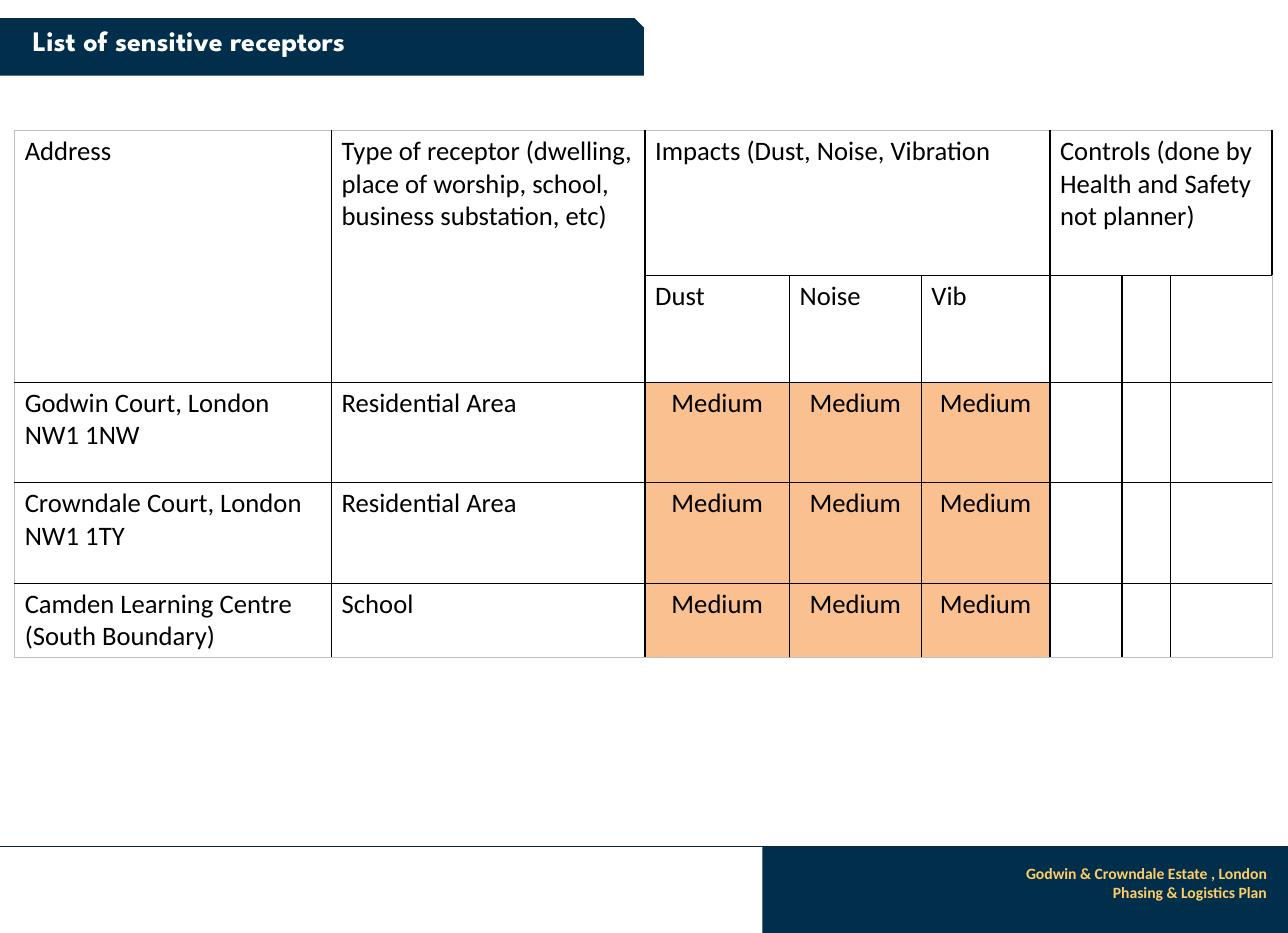
"""Build the slide listing the sensitive receptors around the estate."""
from lxml.etree import SubElement
from pptx import Presentation
from pptx.dml.color import RGBColor
from pptx.enum.shapes import MSO_CONNECTOR, MSO_SHAPE
from pptx.enum.text import MSO_ANCHOR, PP_ALIGN
from pptx.oxml.ns import qn
from pptx.util import Inches, Pt

COLOURS = {
    "navy": "012E4B",
    "rule": "0F243E",
    "gold": "FFCC66",
    "white": "FFFFFF",
    "black": "000000",
    "medium": "FAC090",
    "outline": "BFBFBF",
}
COLUMN_WIDTHS = [2.81, 2.78, 1.28, 1.17, 1.14, 0.64, 0.43, 0.9]
ROW_HEIGHTS = [1.28, 0.95, 0.89, 0.89, 0.66]
HEADINGS = [
    ["Address", "Type of receptor (dwelling, place of worship, school, business substation, etc)",
     "Impacts (Dust, Noise, Vibration", "", "",
     "Controls (done by Health and Safety not planner)", "", ""],
    ["", "", "Dust", "Noise", "Vib", "", "", ""],
]
RECEPTORS = [
    ("Godwin Court, London NW1 1NW", "Residential Area"),
    ("Crowndale Court, London NW1 1TY", "Residential Area"),
    ("Camden Learning Centre (South Boundary)", "School"),
]
MERGES = [(0, 0, 1, 0), (0, 1, 1, 1), (0, 2, 0, 4), (0, 5, 0, 7)]


def colour(name):
    return RGBColor.from_string(COLOURS[name])


def write(frame, lines, size=17, font="Calibri", ink="black", bold=False, align=PP_ALIGN.LEFT):
    frame.word_wrap = True
    for index, line in enumerate(lines):
        paragraph = frame.paragraphs[0] if index == 0 else frame.add_paragraph()
        paragraph.alignment = align
        run = paragraph.add_run()
        run.text = line
        run.font.size = Pt(size)
        run.font.name = font
        run.font.bold = bold
        run.font.color.rgb = colour(ink)


class ReceptorSlide:
    def __init__(self, slide):
        self.slide = slide

    def panel(self, kind, left, top, width, height):
        panel = self.slide.shapes.add_shape(
            kind, Inches(left), Inches(top), Inches(width), Inches(height))
        panel.shadow.inherit = False
        panel.fill.solid()
        panel.fill.fore_color.rgb = colour("navy")
        panel.line.fill.background()

    def rule(self, y, width):
        rule = self.slide.shapes.add_connector(
            MSO_CONNECTOR.STRAIGHT, 0, Inches(y), Inches(width), Inches(y))
        rule.line.color.rgb = colour("rule")
        rule.line.width = Pt(0.75)
        SubElement(rule._element.spPr, qn("a:effectLst"))

    def text(self, left, top, width, height, lines, anchor=MSO_ANCHOR.TOP, **style):
        box = self.slide.shapes.add_textbox(
            Inches(left), Inches(top), Inches(width), Inches(height))
        box.text_frame.vertical_anchor = anchor
        write(box.text_frame, lines, **style)

    def border(self, cell, side, ink, width):
        line = SubElement(cell._tc.get_or_add_tcPr(), qn(f"a:ln{side}"), w=str(Pt(width)))
        fill = SubElement(line, qn("a:solidFill"))
        SubElement(fill, qn("a:srgbClr"), val=COLOURS[ink])

    def table(self, left, top, rows, widths, heights, merges):
        table = self.slide.shapes.add_table(
            len(rows), len(widths), Inches(left), Inches(top),
            Inches(sum(widths)), Inches(sum(heights))).table
        table.first_row = table.horz_banding = False
        for column, width in zip(table.columns, widths):
            column.width = Inches(width)
        for row, height in zip(table.rows, heights):
            row.height = Inches(height)
        for r, row in enumerate(rows):
            for c, content in enumerate(row):
                cell = table.cell(r, c)
                outer = {"L": c == 0, "R": c == len(widths) - 1,
                         "T": r == 0, "B": r == len(rows) - 1}
                for side, is_outer in outer.items():
                    self.border(cell, side, *(("outline", 0.5) if is_outer else ("black", 1)))
                rating = content == "Medium"
                cell.fill.solid()
                cell.fill.fore_color.rgb = colour("medium" if rating else "white")
                cell.margin_left = cell.margin_right = Inches(0.09)
                cell.margin_top = cell.margin_bottom = Inches(0.04)
                if content:
                    write(cell.text_frame, [content],
                          align=PP_ALIGN.CENTER if rating else PP_ALIGN.LEFT)
        for first_row, first_column, last_row, last_column in merges:
            table.cell(first_row, first_column).merge(table.cell(last_row, last_column))


def main():
    deck = Presentation()
    deck.slide_width, deck.slide_height = Inches(11.42), Inches(8.27)
    page = ReceptorSlide(deck.slides.add_slide(deck.slide_layouts[6]))
    page.panel(MSO_SHAPE.RECTANGLE, 6.76, 7.5, 4.66, 0.77)
    page.panel(MSO_SHAPE.SNIP_1_RECTANGLE, 0, 0.16, 5.71, 0.51)
    page.rule(7.5, 11.42)
    page.text(6.82, 7.61, 4.51, 0.44,
              ["Godwin & Crowndale Estate , London", "Phasing & Logistics Plan"],
              size=10, ink="gold", bold=True, align=PP_ALIGN.RIGHT)
    page.text(0, 0.15, 3.35, 0.42, ["List of sensitive receptors"], anchor=MSO_ANCHOR.MIDDLE,
              size=18, font="League Spartan", ink="white", bold=True, align=PP_ALIGN.CENTER)
    ratings = [[*receptor, *["Medium"] * 3, *[""] * 3] for receptor in RECEPTORS]
    page.table(0.13, 1.16, HEADINGS + ratings, COLUMN_WIDTHS, ROW_HEIGHTS, MERGES)
    deck.save("out.pptx")


if __name__ == "__main__":
    main()
